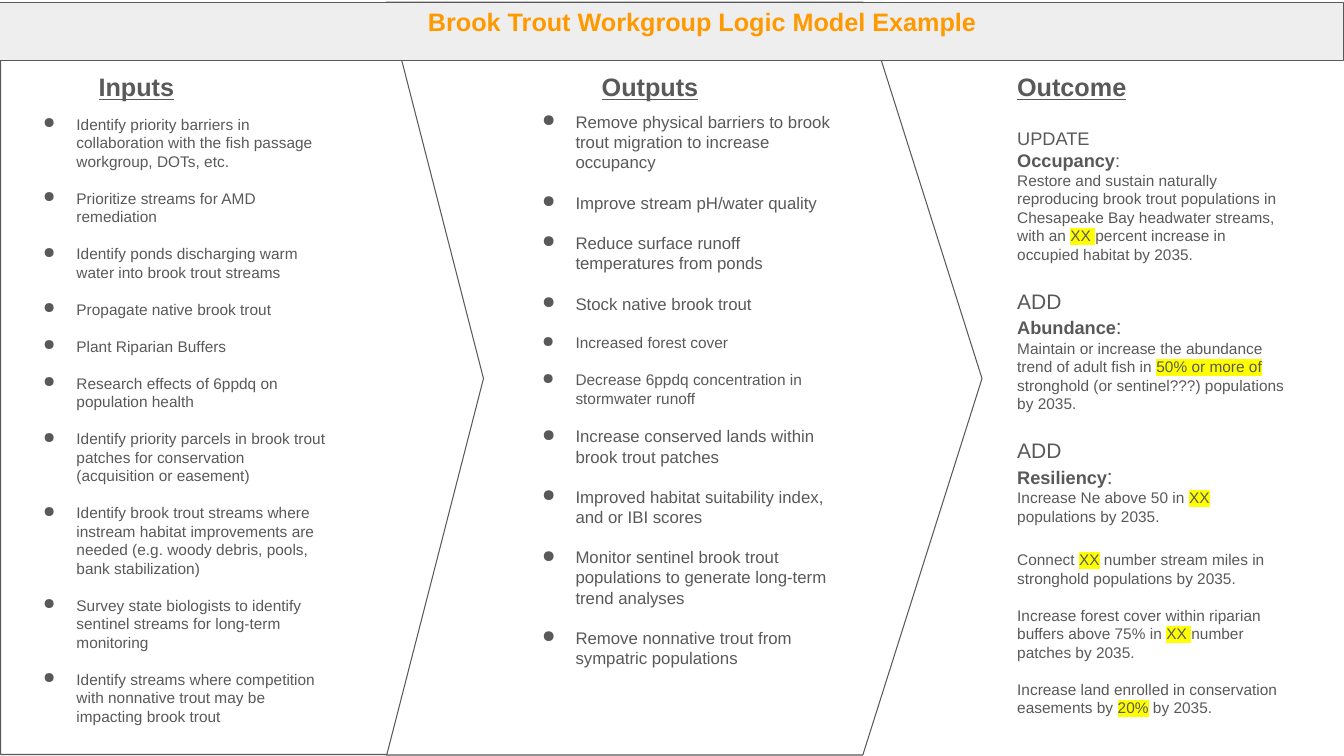
from pptx import Presentation
from pptx.dml.color import RGBColor
from pptx.enum.shapes import MSO_SHAPE
from pptx.enum.text import PP_ALIGN
from pptx.oxml import parse_xml
from pptx.oxml.ns import nsdecls
from pptx.util import Inches, Pt

COLORS = {"text": "595959", "title": "FF9900", "bar": "EEEEEE",
          "white": "FFFFFF", "mark": "FFFF00"}
FONT = "Arial"
LINE = 1.2  # height of a blank line, in font sizes

INPUTS = [
    "Identify priority barriers in collaboration with the fish passage workgroup, DOTs, etc.",
    "Prioritize streams for AMD remediation",
    "Identify ponds discharging warm water into brook trout streams",
    "Propagate native brook trout",
    "Plant Riparian Buffers",
    "Research effects of 6ppdq on population health",
    "Identify priority parcels in brook trout patches for conservation (acquisition or easement)",
    "Identify brook trout streams where instream habitat improvements are needed "
    "(e.g. woody debris, pools, bank stabilization)",
    "Survey state biologists to identify sentinel streams for long-term monitoring",
    "Identify streams where competition with nonnative trout may be impacting brook trout",
]
OUTPUTS = [
    ("Remove physical barriers to brook trout migration to increase occupancy", 12),
    ("Improve stream pH/water quality", 12),
    ("Reduce surface runoff temperatures from ponds", 12),
    ("Stock native brook trout", 12),
    ("Increased forest cover", 11),
    ("Decrease 6ppdq concentration in stormwater runoff", 11),
    ("Increase conserved lands within brook trout patches", 12),
    ("Improved habitat suitability index, and or IBI scores", 12),
    ("Monitor sentinel brook trout populations to generate long-term trend analyses", 12),
    ("Remove nonnative trout from sympatric populations", 12),
]
# action, its size, goal, then statements as (size of gap above, before, marked, after)
OUTCOMES = [
    ("UPDATE", 13, "Occupancy", [
        (0, "Restore and sustain naturally reproducing brook trout populations in "
            "Chesapeake Bay headwater streams, with an ", "XX ",
         "percent increase in occupied habitat by 2035.")]),
    ("ADD", 15, "Abundance", [
        (0, "Maintain or increase the abundance  trend of adult fish in ",
         "50% or more of ", "stronghold (or sentinel???) populations by 2035.")]),
    ("ADD", 15, "Resiliency", [
        (0, "Increase Ne above 50 in ", "XX", " populations by 2035."),
        (15, "Connect ", "XX", " number stream miles in stronghold populations by 2035."),
        (11, "Increase forest cover within riparian buffers above 75% in ", "XX ",
         "number patches by 2035."),
        (11, "Increase land enrolled in conservation easements by ", "20%", " by 2035.")]),
]


def rgb(name):
    return RGBColor.from_string(COLORS[name])


def add_run(p, text, size=11, color="text", bold=False, underline=False, mark=None):
    r = p.add_run()
    r.text = text
    font = r.font
    font.name, font.size, font.bold, font.underline = FONT, Pt(size), bold, underline
    font.color.rgb = rgb(color)
    if mark:
        fill = font.fill._xPr.find("{*}solidFill")
        fill.addnext(parse_xml(f'<a:highlight {nsdecls("a")}>'
                               f'<a:srgbClr val="{COLORS[mark]}"/></a:highlight>'))


def add_frame(slide, box):
    tf = slide.shapes.add_textbox(*map(Inches, box)).text_frame
    tf.word_wrap = True
    tf.margin_left = tf.margin_right = tf.margin_top = tf.margin_bottom = Inches(0.1)
    return tf


def next_paragraph(tf, gap=0):
    """Return the empty first paragraph, or a new one below a gap in points."""
    p = tf.paragraphs[0]
    if p.runs:
        p = tf.add_paragraph()
        p.space_before = Pt(gap)
    return p


def add_panel(slide, shape, box, fill, rotation=0):
    sp = slide.shapes.add_shape(shape, *map(Inches, box))
    sp.rotation = rotation
    sp.shadow.inherit = False
    sp.fill.solid()
    sp.fill.fore_color.rgb = rgb(fill)
    sp.line.color.rgb = rgb("text")
    sp.line.width = Pt(0.75)


def add_heading(slide, text, left):
    tf = add_frame(slide, (left, 0.61, 3.04, 0.74))
    add_run(tf.paragraphs[0], text, size=18, bold=True, underline=True)


def add_bullets(slide, box, items):
    tf = add_frame(slide, box)
    gap = 0
    for text, size in items:
        p = next_paragraph(tf, gap)
        pPr = p._p.get_or_add_pPr()
        pPr.set("marL", str(Inches(0.5)))
        pPr.set("indent", str(Inches(-0.33)))
        for bullet in (f'<a:buClr {nsdecls("a")}><a:srgbClr val="{COLORS["text"]}"/></a:buClr>',
                       f'<a:buChar {nsdecls("a")} char="●"/>'):
            pPr.append(parse_xml(bullet))
        add_run(p, text, size=size)
        gap = size * LINE


def add_outcomes(slide, box):
    tf = add_frame(slide, box)
    for action, size, goal, statements in OUTCOMES:
        add_run(next_paragraph(tf, 15 * LINE), action, size=size)
        p = next_paragraph(tf)
        add_run(p, goal, size=13, bold=True)
        add_run(p, ":", size=size)
        for gap, before, marked, after in statements:
            p = next_paragraph(tf, gap * LINE)
            add_run(p, before)
            add_run(p, marked, mark="mark")
            add_run(p, after)


def add_title(slide, box):
    left, top, width, height = box
    add_panel(slide, MSO_SHAPE.RECTANGLE, box, "bar")
    tf = add_frame(slide, (left + 1.18, top - 0.06, width - 1.76, 0.47))
    p = tf.paragraphs[0]
    p.alignment = PP_ALIGN.CENTER
    add_run(p, "Brook Trout Workgroup Logic Model Example", size=18, color="title", bold=True)


def main():
    prs = Presentation()
    prs.slide_width, prs.slide_height = Inches(13.33), Inches(7.5)
    slide = prs.slides.add_slide(prs.slide_layouts[6])
    for box in ((3.05, 0.8, 7.47, 5.91), (-1.33, 1.36, 7.46, 4.79)):
        add_panel(slide, MSO_SHAPE.FLOWCHART_OFFPAGE_CONNECTOR, box, "white", rotation=270)
    for text, left in (("Inputs", 0.88), ("Outputs", 5.87), ("Outcome", 9.99)):
        add_heading(slide, text, left)
    add_title(slide, (0, 0.02, 13.33, 0.58))
    add_bullets(slide, (0.16, 1.04, 3.18, 6.26), [(text, 11) for text in INPUTS])
    add_bullets(slide, (5.11, 1.01, 3.34, 6.34), OUTPUTS)
    add_outcomes(slide, (9.99, 1.16, 2.92, 6.34))
    prs.save("out.pptx")


if __name__ == "__main__":
    main()
